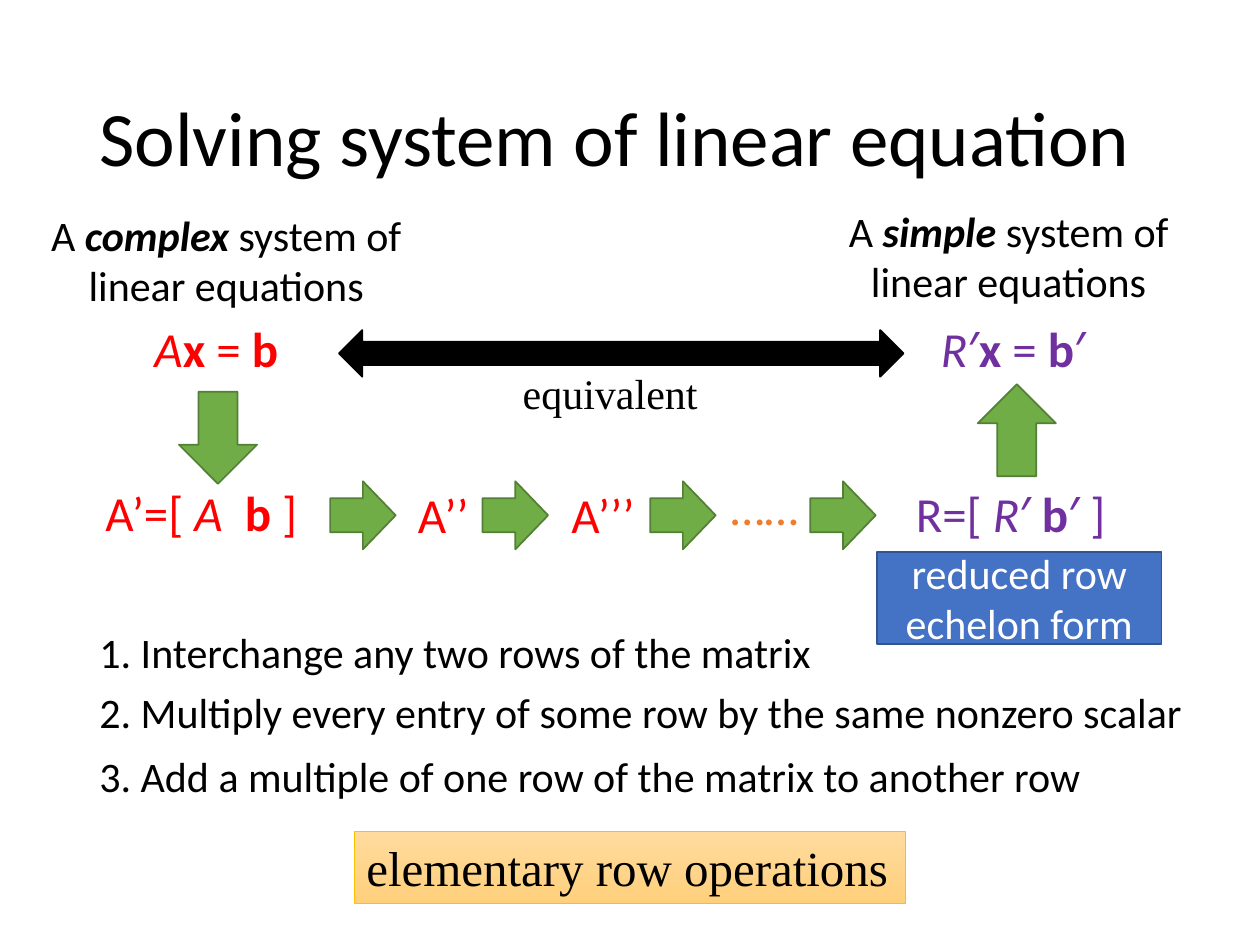
from dataclasses import dataclass

from pptx import Presentation
from pptx.dml.color import RGBColor
from pptx.enum.shapes import MSO_SHAPE as Shape
from pptx.enum.text import MSO_ANCHOR as Anchor, MSO_AUTO_SIZE as AutoSize, PP_ALIGN as Align
from pptx.util import Inches, Pt


@dataclass(frozen=True)
class Theme:
    sans: str = "Calibri"
    serif: str = "Times New Roman"
    title: int = 44
    formula: int = 28
    body: int = 24
    black: str = "000000"
    white: str = "FFFFFF"
    red: str = "FF0000"
    purple: str = "7030A0"
    orange: str = "ED7D31"
    green: str = "70AD47"
    green_line: str = "538035"
    blue: str = "4472C4"
    blue_line: str = "325491"
    gold_line: str = "FFC000"
    gold_top: str = "FFDB9E"
    gold_bottom: str = "FFD07C"


theme = Theme()
presentation = Presentation()
presentation.slide_width, presentation.slide_height = Inches(10), Inches(7.5)
slide = presentation.slides.add_slide(presentation.slide_layouts[6])


def write(shape, runs, size=theme.body, color=theme.black, font=theme.sans,
          align=Align.LEFT, **frame_format):
    """Fill a shape with one paragraph; each run is (text, style letters b and i)."""
    frame = shape.text_frame
    for name, value in {"word_wrap": True, "vertical_anchor": Anchor.TOP, **frame_format}.items():
        setattr(frame, name, value)
    paragraph = frame.paragraphs[0]
    paragraph.alignment = align
    for text, style in runs:
        run = paragraph.add_run()
        run.text = text
        run.font.color.rgb = RGBColor.from_string(color)
        run_format = {"name": font, "size": Pt(size), "bold": "b" in style, "italic": "i" in style}
        for name, value in run_format.items():
            setattr(run.font, name, value)
    return paragraph


def add_block(kind, box, fill, line, width=1):
    """Add a flat preset shape; a fill of None is left to the caller."""
    shape = slide.shapes.add_shape(kind, *map(Inches, box))
    shape.shadow.inherit = False
    if fill:
        shape.fill.solid()
        shape.fill.fore_color.rgb = RGBColor.from_string(fill)
    shape.line.color.rgb = RGBColor.from_string(line)
    shape.line.width = Pt(width)
    return shape


# Title
title = slide.shapes.add_textbox(*map(Inches, (0.69, 0.4, 8.62, 1.45)))
heading = write(title, [("Solving system of linear equation", "")], theme.title,
                vertical_anchor=Anchor.MIDDLE)
heading.line_spacing = 0.9

# Captions above the two systems
for left, top, word in [(0.19, 1.61, "complex"), (6.4, 1.58, "simple")]:
    caption = slide.shapes.add_textbox(*map(Inches, (left, top, 3.21, 0.91)))
    write(caption, [("A ", ""), (word, "bi"), (" system of linear equations", "")],
          align=Align.CENTER)

# Equations and matrices
formulas = [
    (1.04, 2.48, 1.37, theme.red,
     [(" ", ""), ("A", "i"), ("x", "b"), (" = ", ""), ("b", "b")]),
    (7.37, 2.48, 1.37, theme.purple,
     [("R", "i"), ("′", ""), ("x", "b"), (" = ", ""), ("b", "b"), ("′", "")]),
    (0.65, 3.78, 1.93, theme.red,
     [(" A’=[ ", ""), ("A  ", "i"), ("b ", "b"), ("]", "")]),
    (3.13, 3.8, 0.7, theme.red, [(" A’’", "")]),
    (4.35, 3.8, 0.8, theme.red, [(" A’’’", "")]),
    (5.7, 3.73, 0.77, theme.orange, [("……", "")]),
    (7.17, 3.79, 1.74, theme.purple,
     [("R=[ ", ""), ("R", "i"), ("′ ", ""), ("b", "b"), ("′ ]", "")]),
]
for left, top, width, color, runs in formulas:
    formula = slide.shapes.add_textbox(*map(Inches, (left, top, width, 0.57)))
    write(formula, runs, theme.formula, color, word_wrap=False)

# Arrows down into the matrix, along the steps and back up
add_block(Shape.DOWN_ARROW, (1.42, 3.11, 0.62, 0.73), theme.green, theme.green_line)
add_block(Shape.UP_ARROW, (7.76, 3.05, 0.62, 0.73), theme.green, theme.green_line)
for left in (2.62, 3.83, 5.16, 6.43):
    add_block(Shape.RIGHT_ARROW, (left, 3.82, 0.52, 0.54), theme.green, theme.green_line)

# Equivalence arrow and its label
add_block(Shape.LEFT_RIGHT_ARROW, (2.69, 2.62, 4.48, 0.37), theme.black, theme.black)
equivalent = slide.shapes.add_textbox(*map(Inches, (4.05, 2.87, 1.59, 0.5)))
write(equivalent, [("equivalent", "")], font=theme.serif, word_wrap=False)

# Reduced row echelon form label
echelon = add_block(Shape.RECTANGLE, (6.96, 4.38, 2.26, 0.73), theme.blue, theme.blue_line)
write(echelon, [("reduced row echelon form", "")], color=theme.white,
      align=Align.CENTER, vertical_anchor=Anchor.MIDDLE)

# The three operations
operations = [
    (4.92, 7.59, "1. Interchange any two rows of the matrix"),
    (5.4, 9.56, "2. Multiply every entry of some row by the same nonzero scalar"),
    (5.91, 9.34, "3. Add a multiple of one row of the matrix to another row"),
]
for top, width, text in operations:
    operation = slide.shapes.add_textbox(*map(Inches, (0.69, top, width, 0.5)))
    write(operation, [(text, "")])

# Gold summary box
summary = add_block(Shape.RECTANGLE, (2.81, 6.6, 4.38, 0.57), None, theme.gold_line, 0.5)
summary.fill.gradient()
summary.fill.gradient_angle = 270
for stop, color in zip(summary.fill.gradient_stops, (theme.gold_top, theme.gold_bottom)):
    stop.color.rgb = RGBColor.from_string(color)
write(summary, [("elementary row operations", "")], theme.formula, font=theme.serif,
      word_wrap=False, auto_size=AutoSize.SHAPE_TO_FIT_TEXT)

presentation.save("out.pptx")
